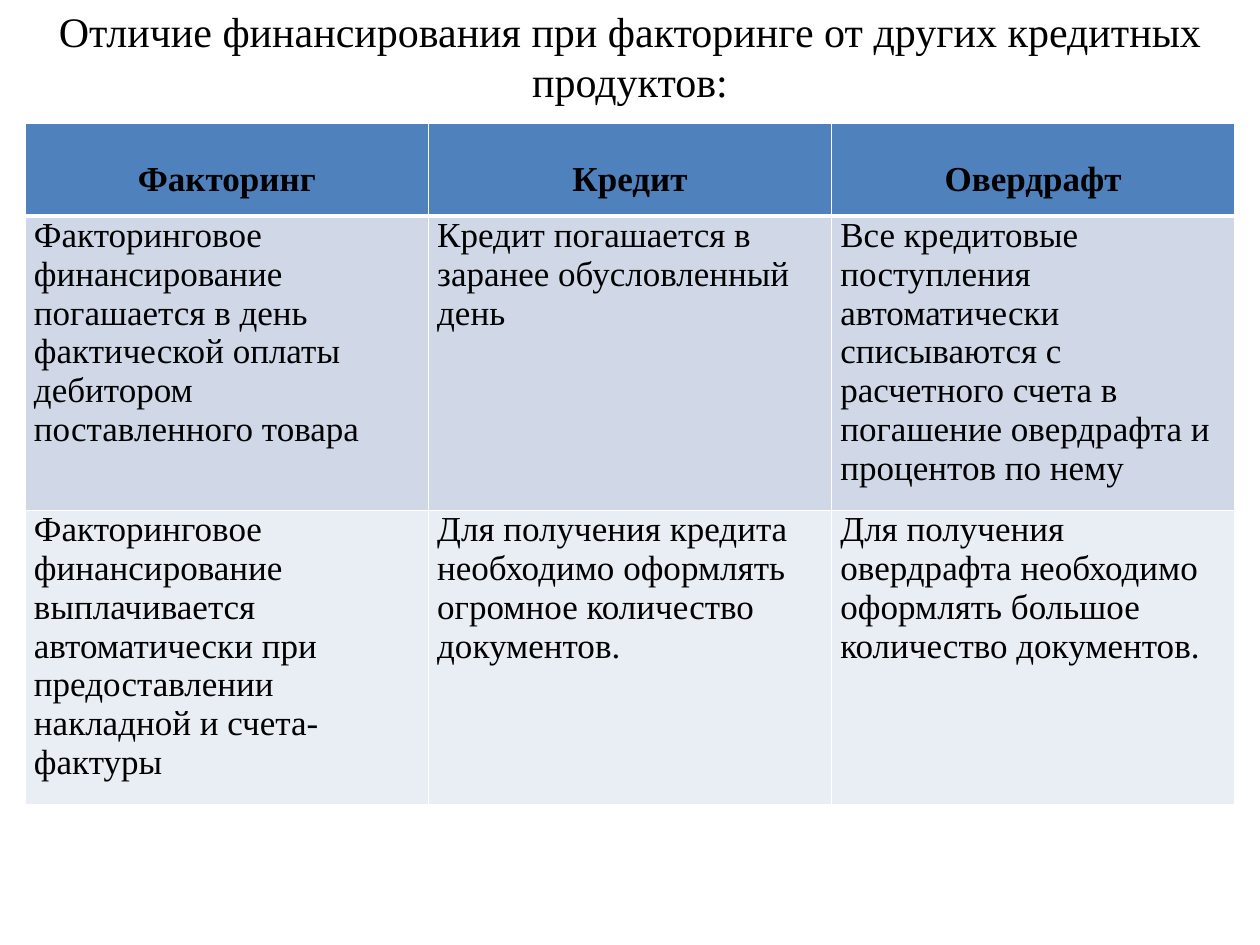
import pptx
import pptx.dml.color
import pptx.enum.text
import pptx.oxml
import pptx.oxml.ns
import pptx.util

WIDE, HIGH = pptx.util.Inches(10), pptx.util.Inches(7.5)
LEFT, SPAN = 0.02, 0.96
ROWS = [0.74, 2.33, 2.33]
FILLS = ["4F81BD", "D0D8E8", "E9EDF4"]
ALIGN = pptx.enum.text.PP_ALIGN
ANCHOR = pptx.enum.text.MSO_ANCHOR
TITLE = "Отличие финансирования при факторинге от других кредитных продуктов:"
CELLS = [
    ["Факторинг", "Кредит", "Овердрафт"],
    [
        "Факторинговое финансирование погашается в день фактической оплаты дебитором поставленного товара",
        "Кредит погашается в заранее обусловленный день",
        "Все кредитовые поступления автоматически списываются с расчетного счета в погашение овердрафта и процентов по нему",
    ],
    [
        "Факторинговое финансирование выплачивается автоматически при предоставлении накладной и счета-фактуры",
        "Для получения кредита необходимо оформлять огромное количество документов.",
        "Для получения овердрафта необходимо оформлять большое количество документов.",
    ],
]


def tint(color, code):
    color.rgb = pptx.dml.color.RGBColor.from_string(code)


def apply(item, form):
    for name, value in form.items():
        setattr(item, name, value)


def write(frame, text, size, bold, form):
    para = frame.paragraphs[0]
    apply(para, form)
    run = para.add_run()
    run.text = text
    apply(run.font, {"name": "Times New Roman", "size": pptx.util.Pt(size), "bold": bold})
    tint(run.font.color, "000000")


def edge(cell, side, width):
    space = pptx.oxml.ns.nsdecls("a")
    line = pptx.oxml.parse_xml(
        f'<a:ln{side} {space} w="{pptx.util.Pt(width)}"><a:solidFill>'
        f'<a:srgbClr val="FFFFFF"/></a:solidFill></a:ln{side}>'
    )
    cell._tc.get_or_add_tcPr().append(line)


def title(slide):
    box = slide.shapes.add_textbox(
        int(WIDE * LEFT), int(HIGH * -0.001), int(WIDE * SPAN), int(HIGH * 0.12)
    )
    box.text_frame.word_wrap = True
    write(box.text_frame, TITLE, 24, False, {"alignment": ALIGN.CENTER})


def fill(cell, text, row):
    head = row == 0
    side = pptx.util.Inches(0.07)
    apply(cell, {
        "margin_left": side, "margin_right": side,
        "margin_top": 0, "margin_bottom": 0,
        "vertical_anchor": ANCHOR.MIDDLE if head else ANCHOR.TOP,
    })
    widths = {"L": 1, "R": 1, "T": 3 if row == 1 else 1, "B": 3 if head else 1}
    for name, width in widths.items():
        edge(cell, name, width)
    cell.fill.solid()
    tint(cell.fill.fore_color, FILLS[row])
    form = {"alignment": ALIGN.CENTER, "line_spacing": 1.5} if head else {"alignment": ALIGN.LEFT}
    write(cell.text_frame, text, 20, head, form)


def grid(slide):
    table = slide.shapes.add_table(
        len(CELLS), len(CELLS[0]), int(WIDE * LEFT), int(HIGH * 0.13),
        int(WIDE * SPAN), pptx.util.Inches(sum(ROWS))
    ).table
    for row, texts in enumerate(CELLS):
        table.rows[row].height = pptx.util.Inches(ROWS[row])
        for col, text in enumerate(texts):
            fill(table.cell(row, col), text, row)


def main():
    deck = pptx.Presentation()
    apply(deck, {"slide_width": WIDE, "slide_height": HIGH})
    slide = deck.slides.add_slide(deck.slide_layouts[6])
    title(slide)
    grid(slide)
    deck.save("out.pptx")


if __name__ == "__main__":
    main()
